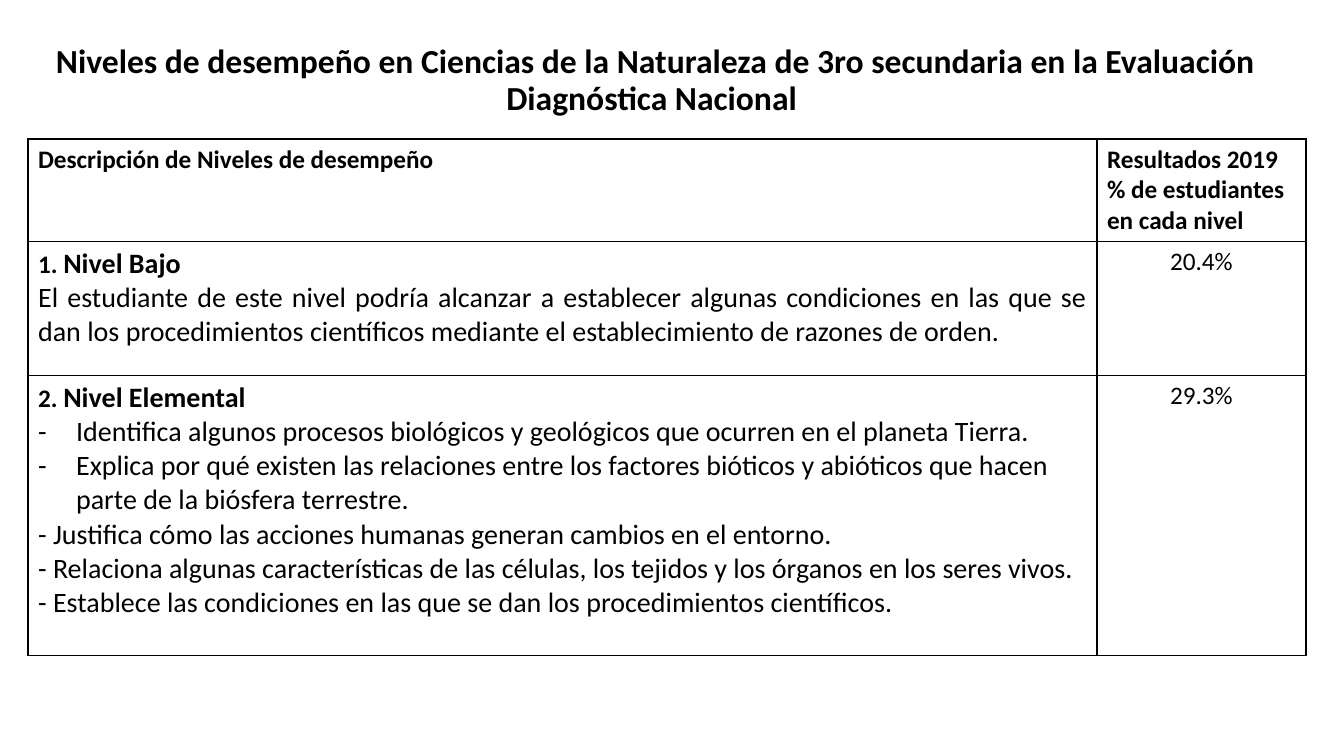
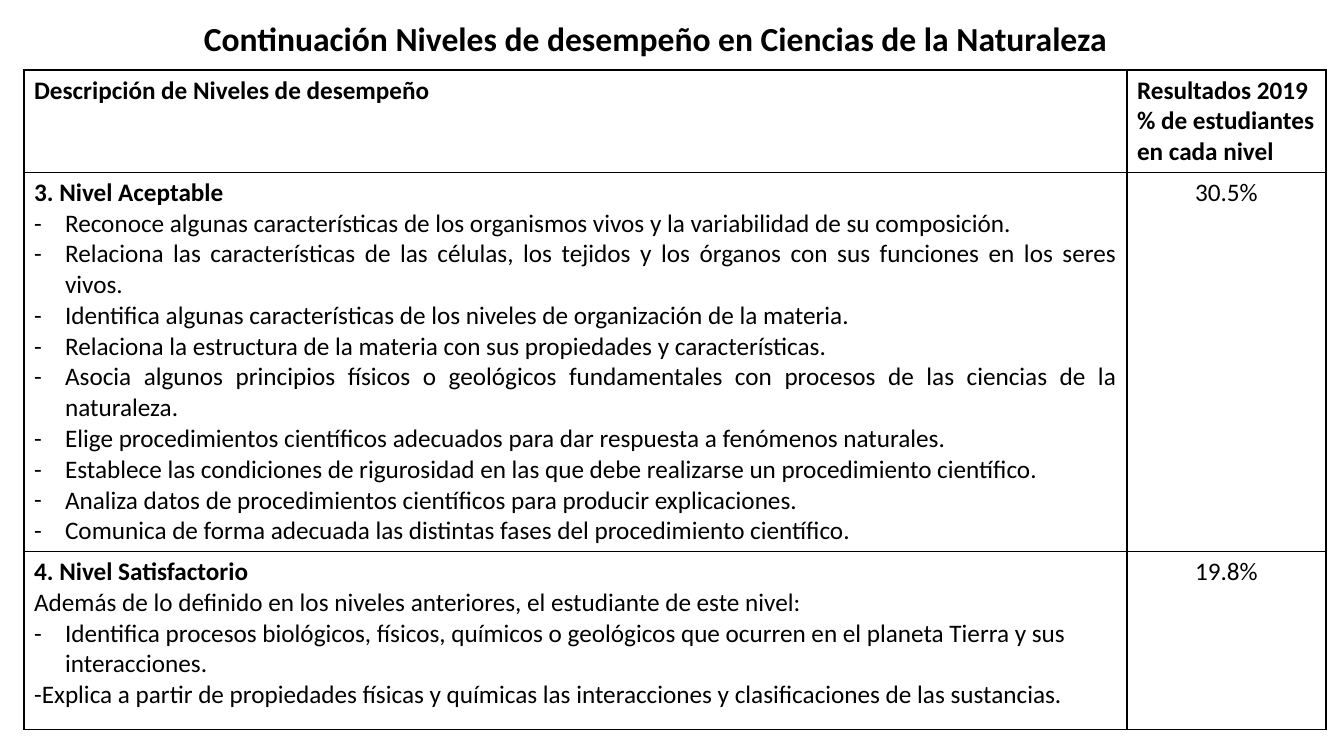
from lxml.etree import SubElement
from pptx import Presentation
from pptx.dml.color import RGBColor
from pptx.enum.text import MSO_ANCHOR, MSO_AUTO_SIZE, PP_ALIGN
from pptx.oxml.ns import qn
from pptx.util import Pt

PX = 914400 / 100.8
FONT = "Calibri"
INK = "000000"
PAPER = "FFFFFF"
TITLE_SIZE = 24
BASE_SIZE = 18
LEFT, JUST, CENTER = PP_ALIGN.LEFT, PP_ALIGN.JUSTIFY, PP_ALIGN.CENTER

HEADERS = (
    ["Descripción de Niveles de desempeño"],
    ["Resultados 2019", "% de estudiantes en cada nivel"],
)

SLIDES = [
    {
        "title": "Niveles de desempeño en Ciencias de la Naturaleza de 3ro secundaria "
                 "en la Evaluación Diagnóstica Nacional ",
        "title_box": (17, 42, 1277, 78),
        "table_at": (28, 139),
        "cols": (1069, 209),
        "rows": (102, 134, 280),
        "size": 20,
        "indent": 38,
        "levels": [
            ("1. ", "Nivel Bajo", "20.4%", [
                (JUST, False, "El estudiante de este nivel podría alcanzar a establecer algunas condiciones en las que se dan los procedimientos científicos mediante el establecimiento de razones de orden."),
            ]),
            ("2. ", "Nivel Elemental", "29.3%", [
                (LEFT, True, "Identifica algunos procesos biológicos y geológicos que ocurren en el planeta Tierra."),
                (LEFT, True, "Explica por qué existen las relaciones entre los factores bióticos y abióticos que hacen parte de la biósfera terrestre."),
                (LEFT, False, "- Justifica cómo las acciones humanas generan cambios en el entorno."),
                (LEFT, False, "- Relaciona algunas características de las células, los tejidos y los órganos en los seres vivos."),
                (LEFT, False, "- Establece las condiciones en las que se dan los procedimientos científicos."),
            ]),
        ],
    },
    {
        "title": "Continuación Niveles de desempeño en Ciencias de la Naturaleza",
        "title_box": (24, 13, 1263, 56),
        "table_at": (24, 70),
        "cols": (1103, 199),
        "rows": (102, 379, 178),
        "size": 18,
        "indent": 31,
        "levels": [
            ("3. ", "Nivel Aceptable", "30.5%", [
                (JUST, True, "Reconoce algunas características de los organismos vivos y la variabilidad de su composición."),
                (JUST, True, "Relaciona las características de las células, los tejidos y los órganos con sus funciones en los seres vivos."),
                (JUST, True, "Identifica algunas características de los niveles de organización de la materia."),
                (JUST, True, "Relaciona la estructura de la materia con sus propiedades y características."),
                (JUST, True, "Asocia algunos principios físicos o geológicos fundamentales con procesos de las ciencias de la naturaleza."),
                (JUST, True, "Elige procedimientos científicos adecuados para dar respuesta a fenómenos naturales."),
                (JUST, True, "Establece las condiciones de rigurosidad en las que debe realizarse un procedimiento científico."),
                (JUST, True, "Analiza datos de procedimientos científicos para producir explicaciones."),
                (JUST, True, "Comunica de forma adecuada las distintas fases del procedimiento científico."),
            ]),
            ("4. ", "Nivel Satisfactorio", "19.8%", [
                (LEFT, False, "Además de lo definido en los niveles anteriores, el estudiante de este nivel:"),
                (LEFT, True, "Identifica procesos biológicos, físicos, químicos o geológicos que ocurren en el planeta Tierra y sus interacciones."),
                (LEFT, False, "-Explica a partir de propiedades físicas y químicas las interacciones y clasificaciones de las sustancias."),
            ]),
        ],
    },
]


def px(n):
    return round(n * PX)


def color(value):
    return RGBColor.from_string(value)


def add_run(p, text, size=BASE_SIZE, bold=False):
    r = p.add_run()
    r.text = text
    r.font.name = FONT
    r.font.size = Pt(size)
    r.font.bold = bold
    r.font.color.rgb = color(INK)


def add_bullet(p, indent):
    pPr = p._p.get_or_add_pPr()
    pPr.set("marL", str(px(indent)))
    pPr.set("indent", str(-px(indent)))
    SubElement(pPr, qn("a:buFont"), typeface=FONT)
    SubElement(pPr, qn("a:buChar"), char="-")


def style_cell(cell):
    tcPr = cell._tc.get_or_add_tcPr()
    for side in ("lnL", "lnR", "lnT", "lnB"):
        ln = SubElement(tcPr, qn(f"a:{side}"), w=str(Pt(1)))
        SubElement(SubElement(ln, qn("a:solidFill")), qn("a:srgbClr"), val=INK)
    cell.fill.solid()
    cell.fill.fore_color.rgb = color(PAPER)


def add_title(s, text, box):
    sp = s.shapes.title
    sp.left, sp.top, sp.width, sp.height = map(px, box)
    tf = sp.text_frame
    tf.auto_size = MSO_AUTO_SIZE.NONE
    tf.word_wrap = True
    tf.vertical_anchor = MSO_ANCHOR.MIDDLE
    p = tf.paragraphs[0]
    p.alignment = CENTER
    p.line_spacing = 0.9
    add_run(p, text, TITLE_SIZE, True)


def fill_header(cell, lines):
    tf = cell.text_frame
    for i, line in enumerate(lines):
        p = tf.add_paragraph() if i else tf.paragraphs[0]
        add_run(p, line, bold=True)


def fill_level(cell, number, name, lines, size, indent):
    tf = cell.text_frame
    p = tf.paragraphs[0]
    add_run(p, number, bold=True)
    add_run(p, name, size, True)
    for alignment, bulleted, line in lines:
        p = tf.add_paragraph()
        p.alignment = alignment
        if bulleted:
            add_bullet(p, indent)
        add_run(p, line, size)


def add_levels_table(s, data):
    cols, rows = data["cols"], data["rows"]
    frame = s.shapes.add_table(len(rows), len(cols), *map(px, data["table_at"]),
                               px(sum(cols)), px(sum(rows)))
    table = frame.table
    table.first_row = table.horz_banding = False
    for column, width in zip(table.columns, cols):
        column.width = px(width)
    for row, height in zip(table.rows, rows):
        row.height = px(height)
    for cell in table.iter_cells():
        style_cell(cell)
    for c, lines in enumerate(HEADERS):
        fill_header(table.cell(0, c), lines)
    for i, (number, name, share, lines) in enumerate(data["levels"], 1):
        fill_level(table.cell(i, 0), number, name, lines, data["size"], data["indent"])
        p = table.cell(i, 1).text_frame.paragraphs[0]
        p.alignment = CENTER
        add_run(p, share)


def main():
    prs = Presentation()
    prs.slide_width, prs.slide_height = px(1344), px(756)
    for data in SLIDES:
        s = prs.slides.add_slide(prs.slide_layouts[5])
        add_title(s, data["title"], data["title_box"])
        add_levels_table(s, data)
    prs.save("out.pptx")


if __name__ == "__main__":
    main()
